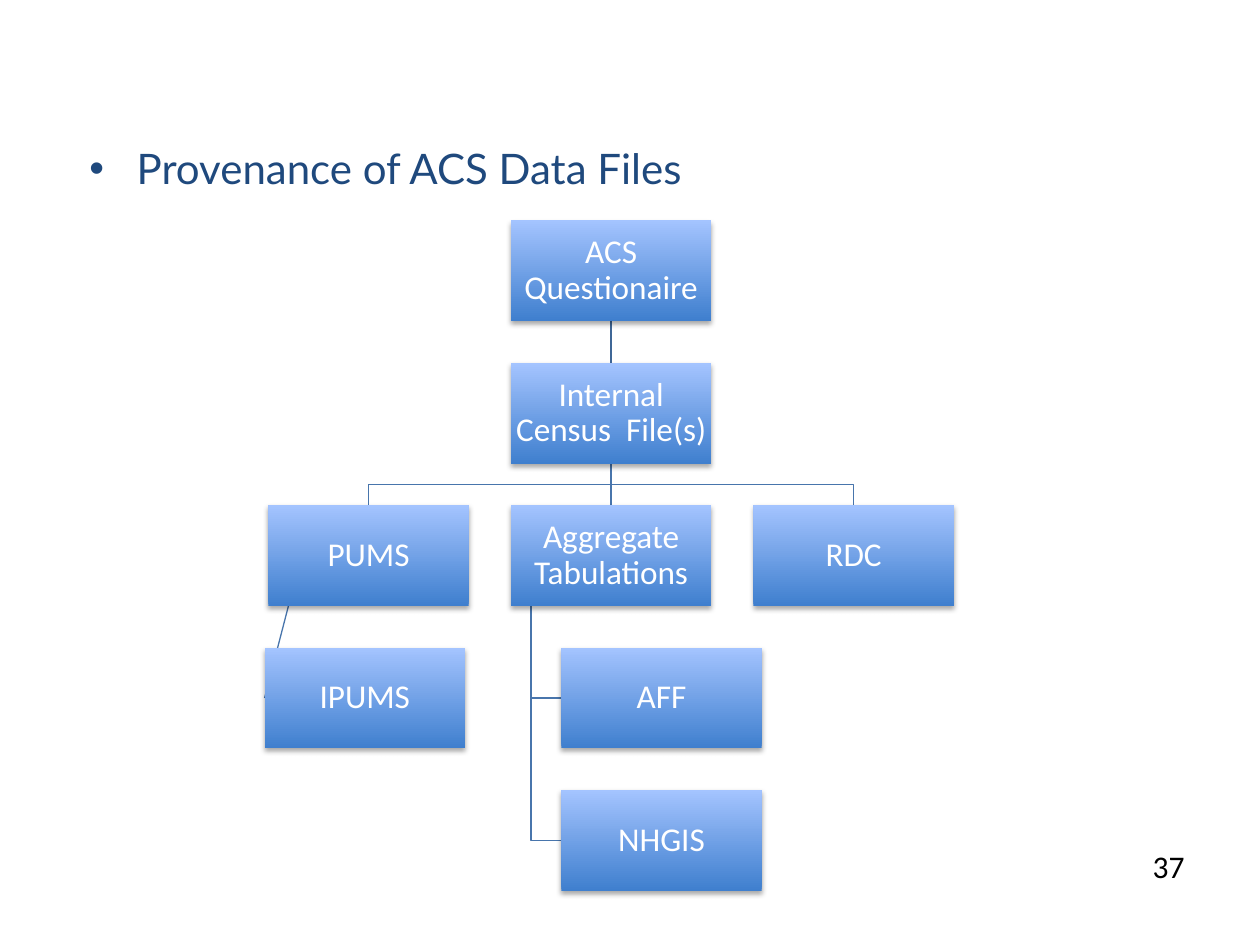
from dataclasses import dataclass

from lxml import etree
from pptx import Presentation
from pptx.dml.color import RGBColor
from pptx.enum.shapes import MSO_CONNECTOR, MSO_SHAPE
from pptx.enum.text import MSO_ANCHOR, MSO_AUTO_SIZE, PP_ALIGN
from pptx.oxml.ns import qn
from pptx.util import Inches, Pt

RECTANGLE = MSO_SHAPE.RECTANGLE
STRAIGHT = MSO_CONNECTOR.STRAIGHT
TOP, MIDDLE = MSO_ANCHOR.TOP, MSO_ANCHOR.MIDDLE
CENTER, RIGHT = PP_ALIGN.CENTER, PP_ALIGN.RIGHT
GROW = MSO_AUTO_SIZE.SHAPE_TO_FIT_TEXT


@dataclass(frozen=True)
class Theme:
    heading_font: str = "Lato"
    body_font: str = "Calibri"
    heading: str = "1F497D"
    number: str = "000000"
    box_text: str = "FFFFFF"
    box_low: str = "3F7FCE"
    box_high: str = "A4C4FF"
    trunk: str = "3F6797"
    branch: str = "4875AC"
    heading_size: int = 24
    number_size: int = 18
    box_size: int = 19
    line_width: float = 0.75


@dataclass(frozen=True)
class Node:
    text: str
    column: int
    row: int
    indent: float = 0

    @property
    def left(self):
        return GRID_LEFT + self.column * COLUMN_STEP + self.indent

    @property
    def top(self):
        return GRID_TOP + self.row * ROW_STEP

    @property
    def center(self):
        return self.left + BOX_WIDTH / 2

    @property
    def middle(self):
        return self.top + BOX_HEIGHT / 2

    @property
    def bottom(self):
        return self.top + BOX_HEIGHT

    @property
    def stem(self):
        return self.left + BOX_WIDTH / 10


THEME = Theme()
SLIDE_WIDTH, SLIDE_HEIGHT = 10, 7.5
GRID_LEFT, GRID_TOP = 2.13, 1.75
COLUMN_STEP, ROW_STEP = 1.925, 1.13
BOX_WIDTH, BOX_HEIGHT = 1.59, 0.8
INSET = 0.01
CHILD_INDENT = 0.4

QUESTIONNAIRE = Node("ACS Questionaire", 1, 0)
CENSUS = Node("Internal Census  File(s)", 1, 1)
PUMS = Node("PUMS", 0, 2)
IPUMS = Node("IPUMS", 0, 3, -0.03)
AGGREGATE = Node("Aggregate Tabulations", 1, 2)
AFF = Node("AFF", 1, 3, CHILD_INDENT)
NHGIS = Node("NHGIS", 1, 4, CHILD_INDENT)
RDC = Node("RDC", 2, 2)
NODES = (QUESTIONNAIRE, CENSUS, PUMS, IPUMS, AGGREGATE, AFF, NHGIS, RDC)


def add_span(para, text, font, size, color):
    span = para.add_run()
    span.text = text
    span.font.name = font
    span.font.size = Pt(size)
    span.font.color.rgb = RGBColor.from_string(color)


def place(box, left, top, width, height):
    box.left, box.top = Inches(left), Inches(top)
    box.width, box.height = Inches(width), Inches(height)


def fill_heading(page, text):
    title = page.shapes.title.element
    title.getparent().remove(title)
    body = page.placeholders[1]
    place(body, 0.061 * SLIDE_WIDTH, 0.144 * SLIDE_HEIGHT, 0.816 * SLIDE_WIDTH, 0.5)
    frame = body.text_frame
    frame.auto_size = GROW
    frame.vertical_anchor = TOP
    para = frame.paragraphs[0]
    para.space_before = Pt(0)
    add_span(para, text, THEME.heading_font, THEME.heading_size, THEME.heading)


def add_page_number(page, text):
    box = page.shapes.add_textbox(0, 0, 0, 0)
    place(box, 0.9 * SLIDE_WIDTH, 0.89 * SLIDE_HEIGHT, 0.5, 0.4)
    box.text_frame.word_wrap = True
    para = box.text_frame.paragraphs[0]
    para.alignment = RIGHT
    add_span(para, text, THEME.body_font, THEME.number_size, THEME.number)


def add_soft_shadow(shape):
    shape.shadow.inherit = False
    effects = shape.element.spPr.find(qn("a:effectLst"))
    shadow = etree.SubElement(effects, qn("a:outerShdw"), blurRad=str(Pt(3.1)),
                              dist=str(Pt(1.8)), dir="5400000", rotWithShape="0")
    color = etree.SubElement(shadow, qn("a:srgbClr"), val="000000")
    etree.SubElement(color, qn("a:alpha"), val="35000")


def add_node(page, node):
    box = page.shapes.add_shape(RECTANGLE, 0, 0, 0, 0)
    place(box, node.left, node.top, BOX_WIDTH, BOX_HEIGHT)
    box.fill.gradient()
    box.fill.gradient_angle = 90
    for stop, color in zip(box.fill.gradient_stops, (THEME.box_low, THEME.box_high)):
        stop.color.rgb = RGBColor.from_string(color)
    box.line.fill.background()
    add_soft_shadow(box)
    frame = box.text_frame
    frame.word_wrap = True
    frame.vertical_anchor = MIDDLE
    frame.margin_left = frame.margin_right = Inches(INSET)
    frame.margin_top = frame.margin_bottom = Inches(INSET)
    para = frame.paragraphs[0]
    para.alignment = CENTER
    para.line_spacing = 0.9
    add_span(para, node.text, THEME.body_font, THEME.box_size, THEME.box_text)


def style_line(line, color):
    line.color.rgb = RGBColor.from_string(color)
    line.width = Pt(THEME.line_width)


def add_straight(page, start, end, color=THEME.branch):
    points = [Inches(value) for value in (*start, *end)]
    connector = page.shapes.add_connector(STRAIGHT, *points)
    style_line(connector.line, color)
    etree.SubElement(connector.element.spPr, qn("a:effectLst"))


def add_bent(page, *points):
    start, *rest = [(Inches(x), Inches(y)) for x, y in points]
    builder = page.shapes.build_freeform(*start)
    builder.add_line_segments(rest, close=False)
    bend = builder.convert_to_shape()
    bend.fill.background()
    style_line(bend.line, THEME.branch)
    bend.shadow.inherit = False


def link_down(page, parent, child, color=THEME.branch):
    add_straight(page, (parent.center, parent.bottom), (child.center, child.top), color)


def link_across(page, parent, child):
    turn = (parent.bottom + child.top) / 2
    add_bent(page, (parent.center, parent.bottom), (parent.center, turn),
             (child.center, turn), (child.center, child.top))


def link_hanging(page, parent, child):
    add_bent(page, (parent.stem, parent.bottom), (parent.stem, child.middle),
             (child.left, child.middle))


def main():
    deck = Presentation()
    deck.slide_width, deck.slide_height = Inches(SLIDE_WIDTH), Inches(SLIDE_HEIGHT)
    page = deck.slides.add_slide(deck.slide_layouts[1])
    fill_heading(page, "Provenance of ACS Data Files")
    add_page_number(page, "37")
    link_across(page, CENSUS, RDC)
    for child in (NHGIS, AFF):
        link_hanging(page, AGGREGATE, child)
    link_down(page, CENSUS, AGGREGATE)
    add_straight(page, (PUMS.stem, PUMS.bottom), (IPUMS.left, IPUMS.middle))
    link_across(page, CENSUS, PUMS)
    link_down(page, QUESTIONNAIRE, CENSUS, THEME.trunk)
    for node in NODES:
        add_node(page, node)
    deck.save("out.pptx")


if __name__ == "__main__":
    main()
